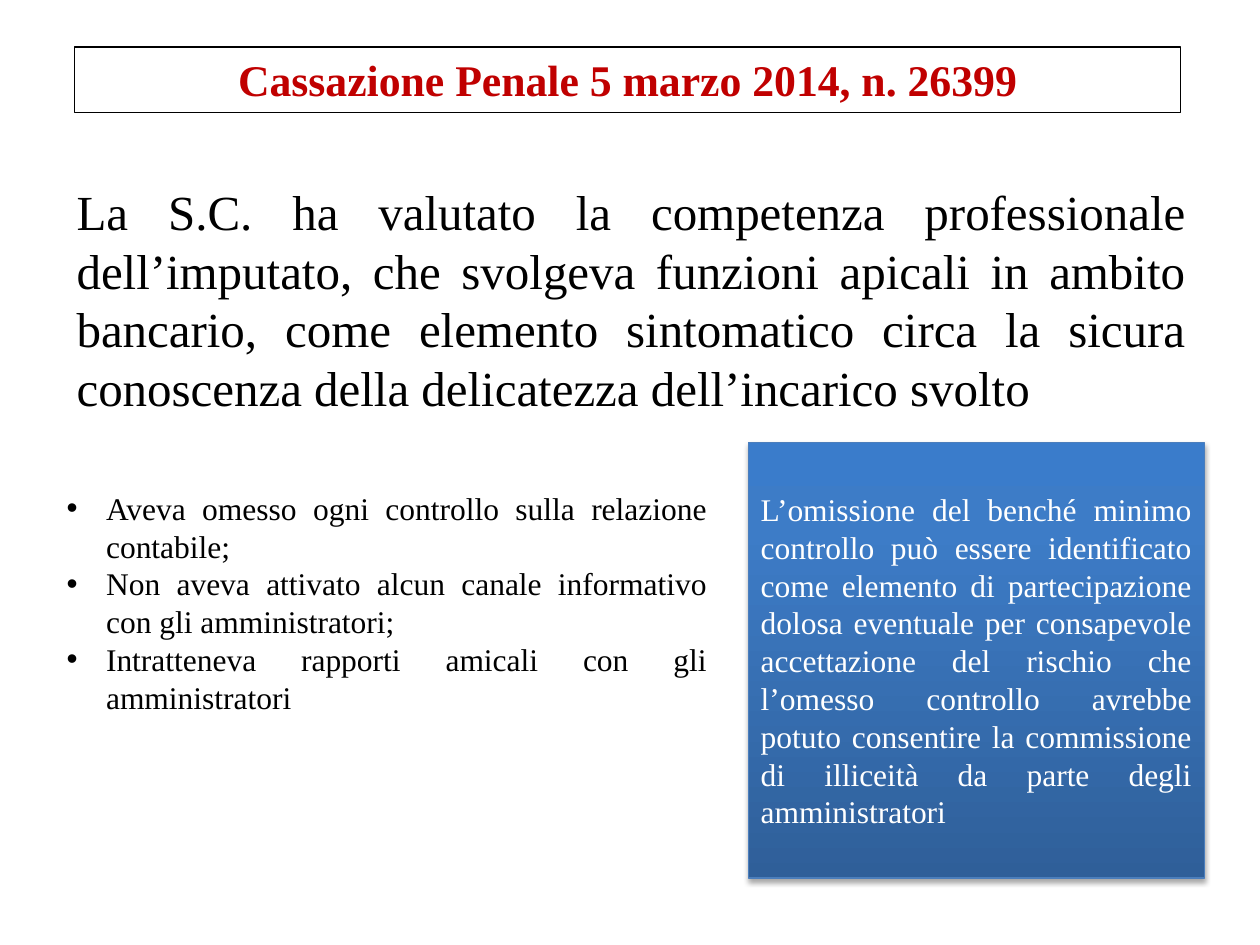
from dataclasses import dataclass
from typing import Optional

from lxml.etree import SubElement
from pptx import Presentation
from pptx.dml.color import RGBColor
from pptx.enum.shapes import MSO_SHAPE
from pptx.enum.text import MSO_ANCHOR, MSO_AUTO_SIZE, PP_ALIGN
from pptx.oxml.ns import qn
from pptx.util import Pt


@dataclass(frozen=True)
class Theme:
    font: str = "Times New Roman"
    title_size: float = 25
    body_size: float = 28
    detail_size: float = 18
    title: str = "C00000"
    ink: str = "000000"
    light: str = "FFFFFF"
    panel_line: str = "4B7EBC"
    panel_stops: tuple = ((0, "2F5F99"), (80, "3D7CC7"), (100, "3A7CCB"))


THEME = Theme()


@dataclass(frozen=True)
class TextBlock:
    place: tuple  # left, top, width, height in points
    lines: tuple
    size: float
    color: str
    align: PP_ALIGN = PP_ALIGN.JUSTIFY
    bold: bool = False
    bullets: bool = False
    outline: Optional[str] = None  # a colour makes the block a rectangle
    gradient: tuple = ()
    anchor: MSO_ANCHOR = MSO_ANCHOR.TOP
    fit: MSO_AUTO_SIZE = MSO_AUTO_SIZE.NONE


BLOCKS = (
    # Main statement
    TextBlock(
        (36.7, 100.1, 648, 254.9),
        ("La S.C. ha valutato la competenza professionale dell’imputato, "
         "che svolgeva funzioni apicali in ambito bancario, come elemento "
         "sintomatico circa la sicura conoscenza della delicatezza "
         "dell’incarico svolto",),
        THEME.body_size, THEME.ink),
    # Framed title
    TextBlock(
        (42.5, 26.8, 632.2, 37.4),
        ("Cassazione Penale 5 marzo 2014, n. 26399",),
        THEME.title_size, THEME.title, align=PP_ALIGN.CENTER, bold=True,
        outline=THEME.ink, fit=MSO_AUTO_SIZE.SHAPE_TO_FIT_TEXT),
    # List of findings
    TextBlock(
        (31, 275.8, 380.2, 138.2),
        ("Aveva omesso ogni controllo sulla relazione contabile;",
         "Non aveva attivato alcun canale informativo con gli amministratori;",
         "Intratteneva rapporti amicali con gli amministratori"),
        THEME.detail_size, THEME.ink, bullets=True,
        fit=MSO_AUTO_SIZE.SHAPE_TO_FIT_TEXT),
    # Conclusion panel
    TextBlock(
        (427.6, 252.7, 260.6, 249.1),
        ("L’omissione del benché minimo controllo può essere identificato "
         "come elemento di partecipazione dolosa eventuale per consapevole "
         "accettazione del rischio che l’omesso controllo avrebbe potuto "
         "consentire la commissione di illiceità da parte degli "
         "amministratori",),
        THEME.detail_size, THEME.light, outline=THEME.panel_line,
        gradient=THEME.panel_stops, anchor=MSO_ANCHOR.MIDDLE),
)


def apply(target, values: dict) -> None:
    for name, value in values.items():
        setattr(target, name, value)


def add_color(parent, color: str):
    return SubElement(parent, qn("a:srgbClr"), val=color)


def fill_gradient(box, stops: tuple) -> None:
    """Fill upwards from the first stop to the last."""
    box.fill.gradient()
    box.fill.gradient_angle = 90
    stop_list = box.element.spPr.find(".//" + qn("a:gsLst"))
    for stop in list(stop_list):
        stop_list.remove(stop)
    for position, color in stops:
        add_color(SubElement(stop_list, qn("a:gs"), pos=str(position * 1000)), color)


def add_shadow(box) -> None:
    effects = box.element.spPr.find(qn("a:effectLst"))
    shadow = SubElement(effects, qn("a:outerShdw"), blurRad=str(Pt(3.1)),
                        dist=str(Pt(1.8)), dir="5400000", rotWithShape="0")
    SubElement(add_color(shadow, THEME.ink), qn("a:alpha"), val="35000")


def add_bullet(para) -> None:
    indent = Pt(22.5)
    properties = para._p.get_or_add_pPr()
    properties.set("marL", str(indent))
    properties.set("indent", str(-indent))
    SubElement(properties, qn("a:buFont"), typeface="Arial")
    SubElement(properties, qn("a:buChar"), char="•")


def add_box(page, block: TextBlock):
    place = [Pt(length) for length in block.place]
    if block.outline is None:
        return page.shapes.add_textbox(*place)
    box = page.shapes.add_shape(MSO_SHAPE.RECTANGLE, *place)
    box.shadow.inherit = False
    box.line.color.rgb = RGBColor.from_string(block.outline)
    box.line.width = Pt(0.75)
    if block.gradient:
        fill_gradient(box, block.gradient)
        add_shadow(box)
    else:
        box.fill.background()
    return box


def draw_block(page, block: TextBlock) -> None:
    frame = add_box(page, block).text_frame
    apply(frame, {"word_wrap": True, "auto_size": block.fit,
                  "vertical_anchor": block.anchor})
    for index, line in enumerate(block.lines):
        para = frame.add_paragraph() if index else frame.paragraphs[0]
        para.alignment = block.align
        if block.bullets:
            add_bullet(para)
        span = para.add_run()
        span.text = line
        apply(span.font, {"name": THEME.font, "size": Pt(block.size),
                          "bold": block.bold})
        span.font.color.rgb = RGBColor.from_string(block.color)


def main() -> None:
    deck = Presentation()
    apply(deck, {"slide_width": Pt(720), "slide_height": Pt(540)})
    page = deck.slides.add_slide(deck.slide_layouts[6])
    for block in BLOCKS:
        draw_block(page, block)
    deck.save("out.pptx")


if __name__ == "__main__":
    main()
